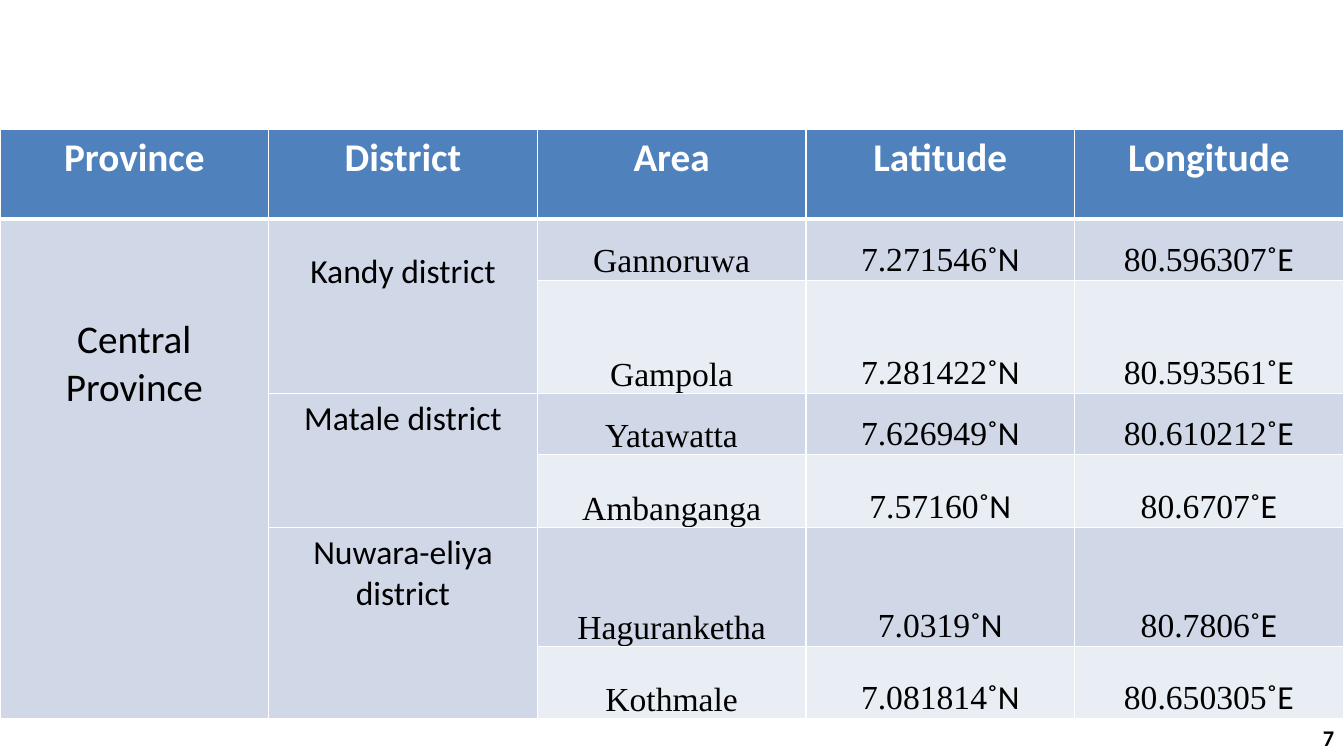
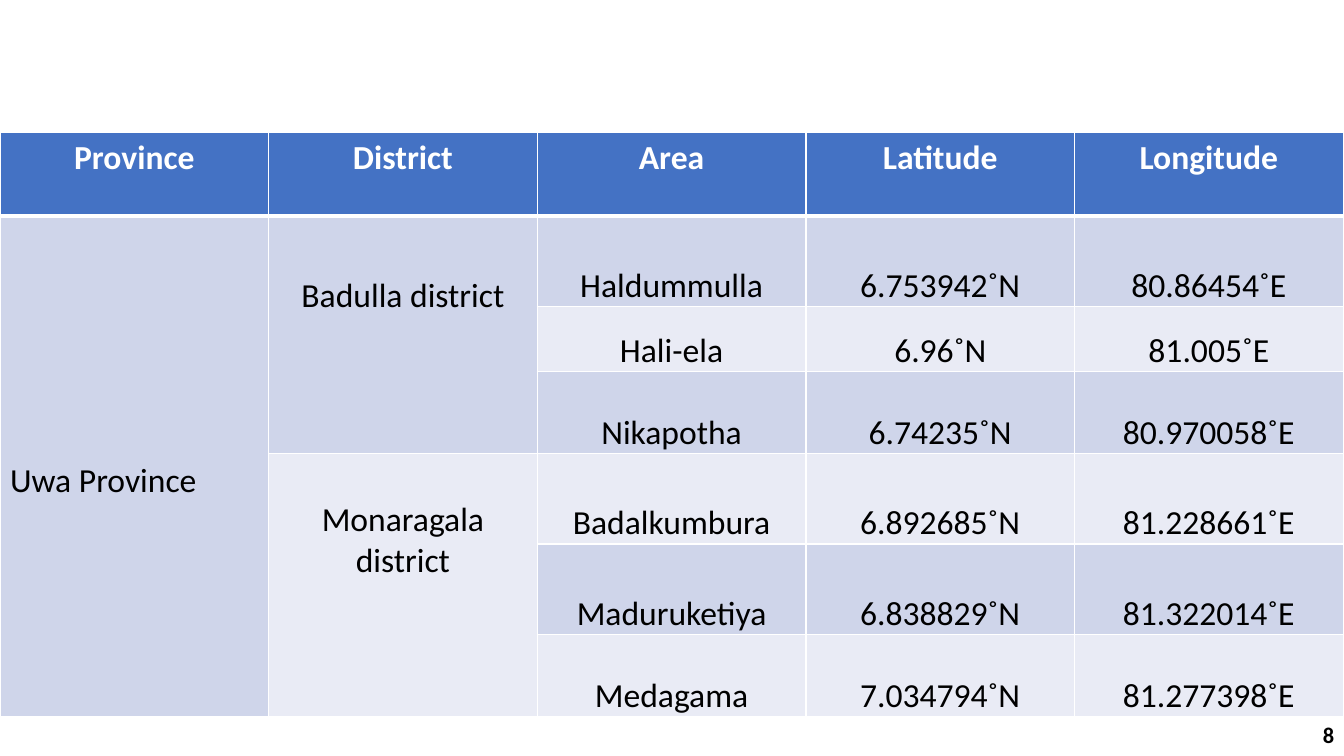
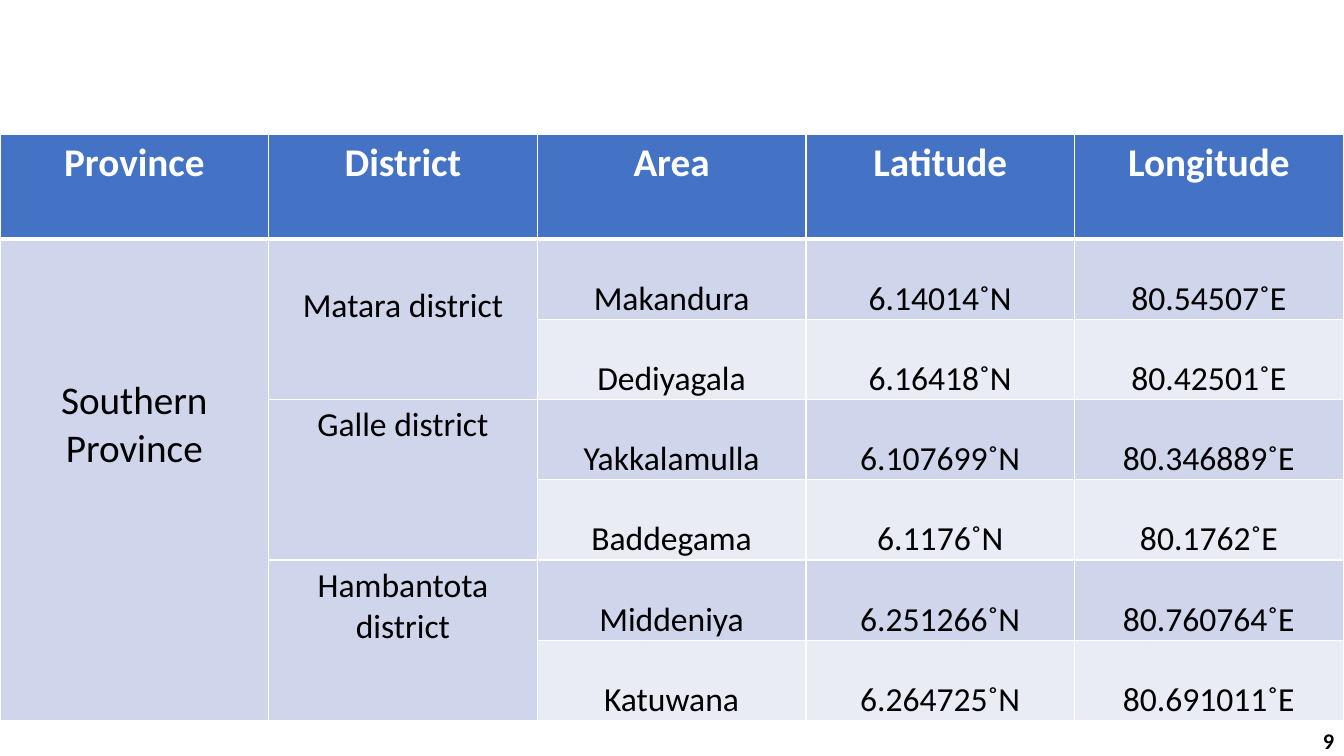
from lxml.etree import SubElement
from pptx import Presentation
from pptx.dml.color import RGBColor
from pptx.enum.text import MSO_ANCHOR, PP_ALIGN
from pptx.oxml.ns import qn
from pptx.util import Cm, Pt

# Shared look
WHITE = RGBColor(0xFF, 0xFF, 0xFF)
BLACK = RGBColor(0x00, 0x00, 0x00)
STEEL = (RGBColor(0x4F, 0x81, 0xBD), RGBColor(0xD0, 0xD8, 0xE8), RGBColor(0xE9, 0xED, 0xF4))
ROYAL = (RGBColor(0x44, 0x72, 0xC4), RGBColor(0xCF, 0xD5, 0xEA), RGBColor(0xE9, 0xEB, 0xF5))
FONT, SERIF = "Calibri", "Times New Roman"
HEADERS = ["Province", "District", "Area", "Latitude", "Longitude"]
WIDTH, COL = 33.87, 6.77
BODY_SIZE = 24

# One entry per slide; "drop" is the space above a province or district name
PAGES = [
    dict(number="7", left=26.25, top=18.08, table_top=3.25, colors=STEEL, area_font=SERIF,
         header_size=28, header_line=3, rows=[2.27, 1.54, 2.85, 1.54, 1.84, 3.0, 1.81],
         province="Central Province", size=28, drop=2.45, align=PP_ALIGN.CENTER,
         districts=[
             ("Kandy district", 0.82, [("Gannoruwa", "7.271546˚N", "80.596307˚E"),
                                       ("Gampola", "7.281422˚N", "80.593561˚E")]),
             ("Matale district", 0.13, [("Yatawatta", "7.626949˚N", "80.610212˚E"),
                                        ("Ambanganga", "7.57160˚N", "80.6707˚E")]),
             ("Nuwara-eliya district", 0.13, [("Haguranketha", "7.0319˚N", "80.7806˚E"),
                                              ("Kothmale", "7.081814˚N", "80.650305˚E")])]),
    dict(number="8", left=26.5, top=18.01, table_top=3.33, colors=ROYAL, area_font=FONT,
         header_size=24, header_line=1, rows=[2.12, 2.28, 1.63, 2.07, 2.28, 2.28, 2.08],
         province="Uwa Province", size=24, drop=6.15, align=PP_ALIGN.LEFT,
         districts=[
             ("Badulla district", 1.5, [("Haldummulla", "6.753942˚N", "80.86454˚E"),
                                        ("Hali-ela", "6.96˚N", "81.005˚E"),
                                        ("Nikapotha", "6.74235˚N", "80.970058˚E")]),
             ("Monaragala district", 1.16, [("Badalkumbura", "6.892685˚N", "81.228661˚E"),
                                            ("Maduruketiya", "6.838829˚N", "81.322014˚E"),
                                            ("Medagama", "7.034794˚N", "81.277398˚E")])]),
    dict(number="9", left=26.25, top=18.14, table_top=3.39, colors=ROYAL, area_font=FONT,
         header_size=28, header_line=1, rows=[2.64] + [2.02] * 6,
         province="Southern Province", size=28, drop=3.48, align=PP_ALIGN.CENTER,
         districts=[
             ("Matara district", 1.16, [("Makandura", "6.14014˚N", "80.54507˚E"),
                                        ("Dediyagala", "6.16418˚N", "80.42501˚E")]),
             ("Galle district", 0.13, [("Yakkalamulla", "6.107699˚N", "80.346889˚E"),
                                       ("Baddegama", "6.1176˚N", "80.1762˚E")]),
             ("Hambantota district", 0.13, [("Middeniya", "6.251266˚N", "80.760764˚E"),
                                            ("Katuwana", "6.264725˚N", "80.691011˚E")])]),
]


def write(tf, parts, size, color=BLACK, bold=False, align=PP_ALIGN.CENTER):
    """Fill the first paragraph with (text, font name) runs."""
    p = tf.paragraphs[0]
    p.alignment = align
    for text, name in parts:
        r = p.add_run()
        r.text = text
        r.font.name, r.font.size, r.font.bold = name, Pt(size), bold
        r.font.color.rgb = color
    return p


def style_cell(cell, color, top, bottom):
    """Set the fill and the white borders of a cell; widths in points."""
    cell.fill.solid()
    cell.fill.fore_color.rgb = color
    tcPr = cell._tc.get_or_add_tcPr()
    for i, (side, width) in enumerate([("L", 1), ("R", 1), ("T", top), ("B", bottom)]):
        ln = SubElement(tcPr, qn(f"a:ln{side}"), w=str(Pt(width)))
        fill = SubElement(ln, qn("a:solidFill"))
        SubElement(fill, qn("a:srgbClr"), val=str(WHITE))
        tcPr.insert(i, ln)


prs = Presentation()
prs.slide_width, prs.slide_height = Cm(WIDTH), Cm(19.05)

for page in PAGES:
    s = prs.slides.add_slide(prs.slide_layouts[6])

    # Page number
    sp = s.shapes.add_textbox(Cm(page["left"]), Cm(page["top"]), Cm(WIDTH - page["left"]), Cm(1.02))
    tf = sp.text_frame
    tf.word_wrap = True
    tf.vertical_anchor = MSO_ANCHOR.MIDDLE
    write(tf, [(page["number"], FONT)], 16, bold=True, align=PP_ALIGN.RIGHT)

    # Table grid
    rows = page["rows"]
    table = s.shapes.add_table(len(rows), len(HEADERS), Cm(0), Cm(page["table_top"]),
                               Cm(WIDTH), Cm(sum(rows))).table
    table.horz_banding = False
    for column in table.columns:
        column.width = Cm(COL)
    header_color, dark, light = page["colors"]
    for i, height in enumerate(rows):
        table.rows[i].height = Cm(height)
        color = header_color if i == 0 else dark if i % 2 else light
        top = page["header_line"] if i == 1 else 1
        for cell in table.rows[i].cells:
            style_cell(cell, color, top, 3 if i == 0 else 1)

    # Header row
    for j, text in enumerate(HEADERS):
        write(table.cell(0, j).text_frame, [(text, FONT)], page["header_size"], WHITE, True)

    # Province
    cell = table.cell(1, 0)
    cell.merge(table.cell(len(rows) - 1, 0))
    cell.margin_top = Cm(page["drop"])
    write(cell.text_frame, [(page["province"], FONT)], page["size"], align=page["align"])

    # Districts and their areas
    row = 1
    for district, drop, areas in page["districts"]:
        cell = table.cell(row, 1)
        cell.merge(table.cell(row + len(areas) - 1, 1))
        cell.margin_top = Cm(drop)
        write(cell.text_frame, [(district, FONT)], BODY_SIZE)
        for area, latitude, longitude in areas:
            contents = [[(area, page["area_font"])]]
            for value in (latitude, longitude):
                contents.append([(value[:-2], page["area_font"]), (value[-2:], FONT)])
            for j, parts in enumerate(contents, start=2):
                cell = table.cell(row, j)
                cell.vertical_anchor = MSO_ANCHOR.BOTTOM
                cell.margin_left = cell.margin_right = Cm(0.18)
                cell.margin_top = cell.margin_bottom = Cm(0)
                p = write(cell.text_frame, parts, BODY_SIZE)
                p.line_spacing = 1.15
            row += 1

prs.save("out.pptx")
